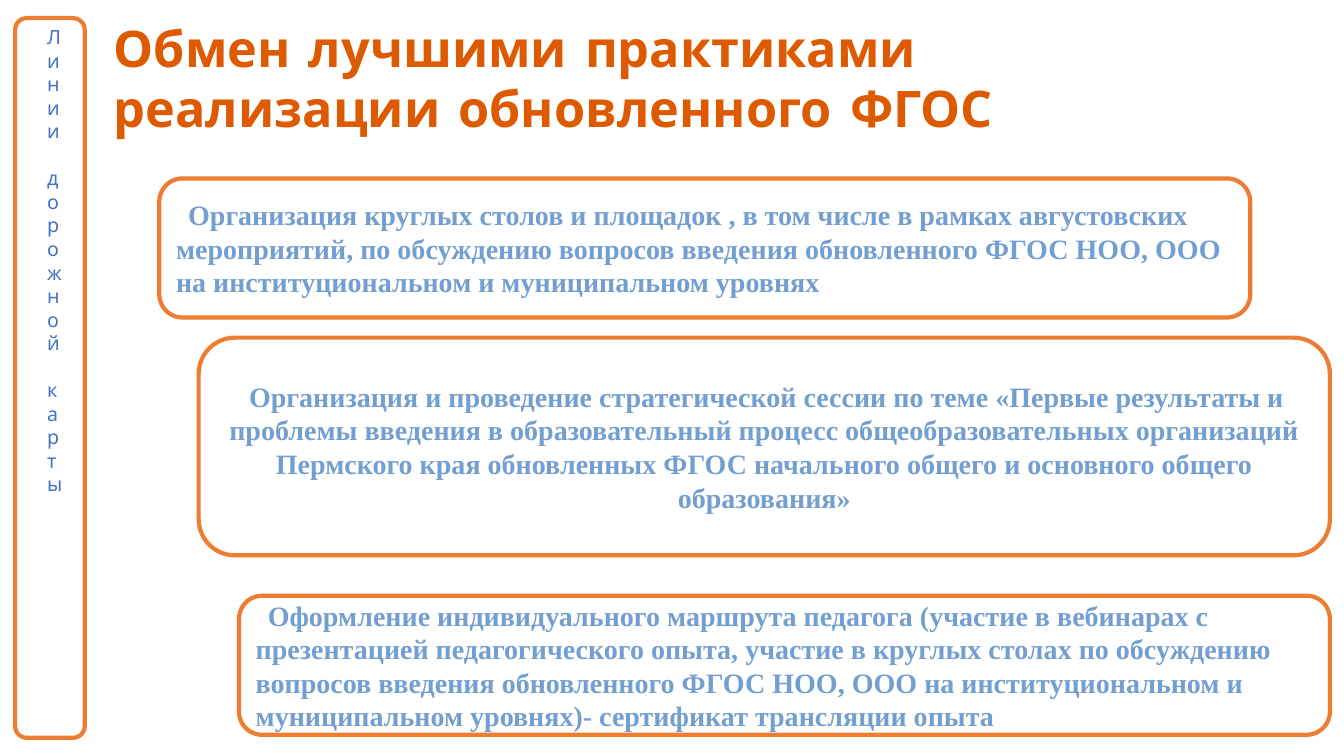
import pptx
import pptx.util
import pptx.dml.color
import pptx.enum.shapes
import pptx.enum.text

Inches, Pt = pptx.util.Inches, pptx.util.Pt
RGBColor = pptx.dml.color.RGBColor
ALIGN = pptx.enum.text.PP_ALIGN
ANCHOR = pptx.enum.text.MSO_ANCHOR

# Content
TITLE = ["Обмен лучшими практиками", "реализации обновленного ФГОС"]
LABEL = ["Линии дорожной карты"]
# text, alignment, first-line indent, left, top, width, height
CARDS = [
    ("Организация круглых столов и площадок , в том числе в рамках "
     "августовских мероприятий, по обсуждению вопросов введения "
     "обновленного ФГОС НОО, ООО на институциональном и муниципальном уровнях",
     ALIGN.LEFT, 0.12, 1.58, 1.77, 10.82, 1.38),
    ("Организация и проведение стратегической сессии по теме «Первые "
     "результаты и проблемы введения в образовательный процесс "
     "общеобразовательных организаций Пермского края обновленных ФГОС "
     "начального общего и основного общего образования»",
     ALIGN.CENTER, 0.05, 1.97, 3.35, 11.22, 2.16),
    ("Оформление индивидуального маршрута педагога (участие в вебинарах с "
     "презентацией педагогического опыта, участие в круглых столах по "
     "обсуждению вопросов введения обновленного ФГОС НОО, ООО на "
     "институциональном и муниципальном уровнях)- сертификат трансляции опыта",
     ALIGN.LEFT, 0.12, 2.37, 5.91, 10.82, 1.38),
]

# Style
WHITE = RGBColor(0xFF, 0xFF, 0xFF)
ORANGE = RGBColor(0xED, 0x7D, 0x31)
RUST = RGBColor(0xDE, 0x5A, 0x00)
BLUE = RGBColor(0x44, 0x72, 0xC4)
SKY = RGBColor(0x72, 0x9F, 0xCF)
HEAD, BODY = "Comic Neue", "Times New Roman"

deck = pptx.Presentation()
deck.slide_width, deck.slide_height = Inches(13.33), Inches(7.5)
slide = deck.slides.add_slide(deck.slide_layouts[6])


def frame(*area):
    """Add a white rounded panel with an orange outline."""
    panel = slide.shapes.add_shape(
        pptx.enum.shapes.MSO_SHAPE.ROUNDED_RECTANGLE, *map(Inches, area))
    panel.shadow.inherit = False
    panel.fill.solid()
    panel.fill.fore_color.rgb = WHITE
    panel.line.color.rgb = ORANGE
    panel.line.width = Pt(3)
    return panel


def write(shape, lines, font, size, color, bold=False,
          align=ALIGN.LEFT, anchor=ANCHOR.MIDDLE, indent=0):
    """Fill a shape with one paragraph per line."""
    text = shape.text_frame
    text.word_wrap = True
    text.vertical_anchor = anchor
    for i, line in enumerate(lines):
        para = text.add_paragraph() if i else text.paragraphs[0]
        para.alignment = align
        if indent:
            para._p.get_or_add_pPr().set("indent", str(Inches(indent)))
        run = para.add_run()
        run.text = line
        run.font.name, run.font.size = font, Pt(size)
        run.font.bold, run.font.color.rgb = bold, color


# Title
title = slide.shapes.add_textbox(*map(Inches, (1.03, 0.29, 10.95, 0.95)))
write(title, TITLE, HEAD, 36, RUST, bold=True)

# Side strip: the narrow box stacks the label letter by letter
frame(0.15, 0.18, 0.69, 7.14)
label = slide.shapes.add_textbox(*map(Inches, (0.37, 0.2, 0.22, 4.76)))
write(label, LABEL, HEAD, 14, BLUE, anchor=ANCHOR.TOP)

# Cards
for text, align, indent, *area in CARDS:
    write(frame(*area), [text], BODY, 20, SKY, bold=True,
          align=align, indent=indent)

deck.save("out.pptx")
